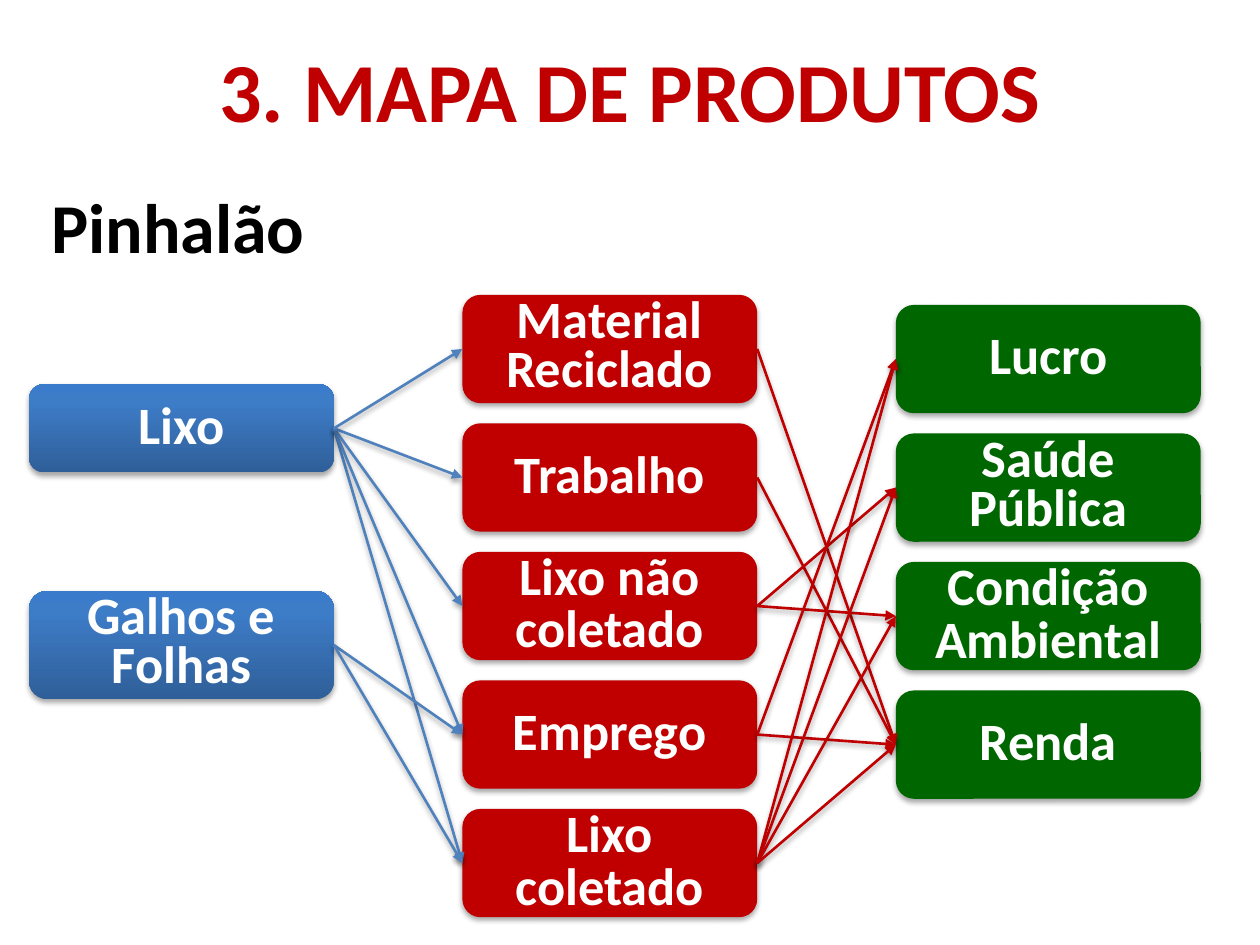
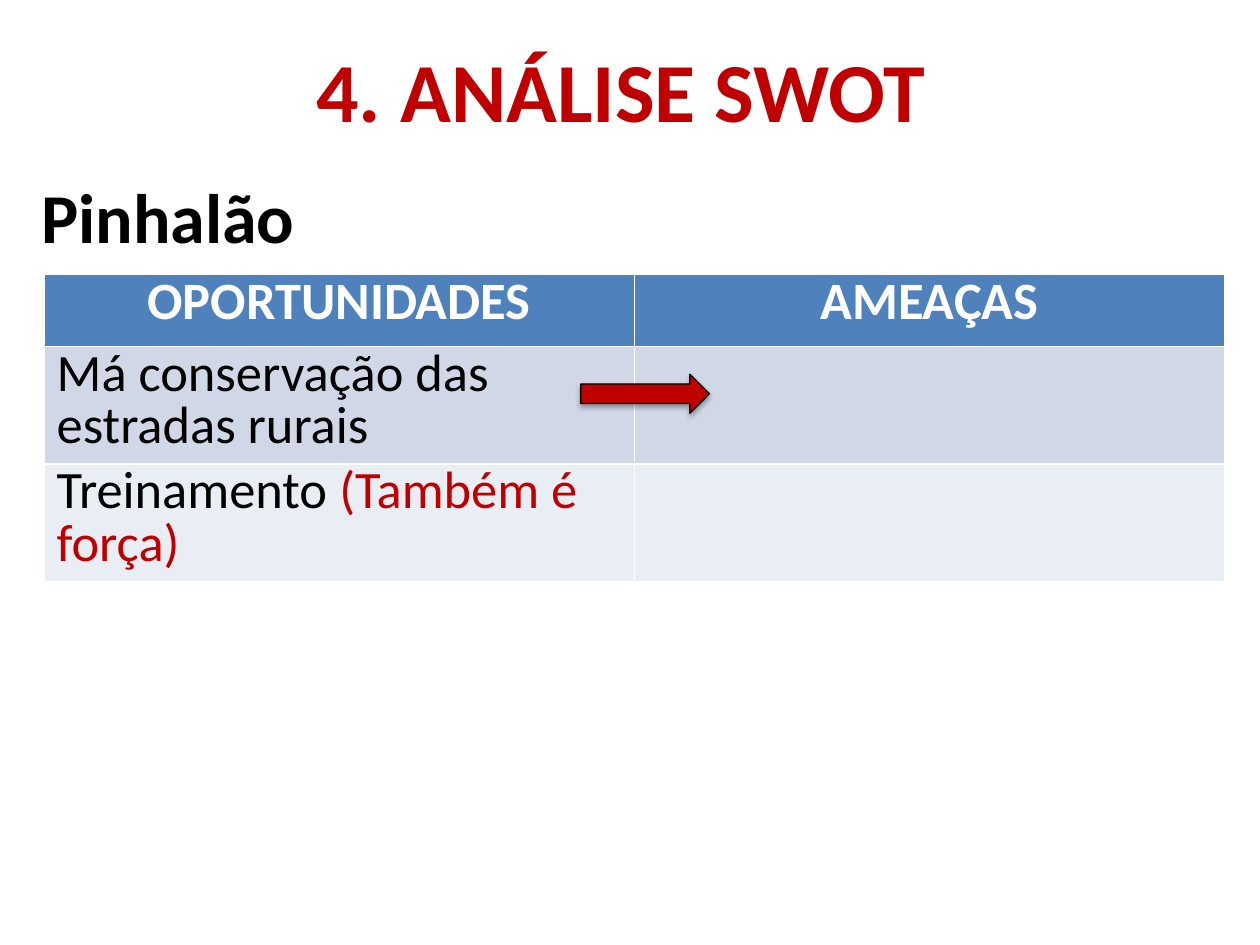
"""Build a product map slide and a SWOT table slide."""
from copy import deepcopy
from lxml import etree
from pptx import Presentation
from pptx.dml.color import RGBColor
from pptx.enum.shapes import MSO_CONNECTOR, MSO_SHAPE
from pptx.enum.text import MSO_ANCHOR, MSO_AUTO_SIZE, PP_ALIGN
from pptx.oxml.ns import qn
from pptx.util import Inches, Pt

RED = RGBColor(0xC0, 0x00, 0x00)
GREEN = RGBColor(0x00, 0x66, 0x00)
BLUE = RGBColor(0x4F, 0x81, 0xBD)
BLACK = RGBColor(0x00, 0x00, 0x00)
WHITE = RGBColor(0xFF, 0xFF, 0xFF)
BAND = RGBColor(0xD0, 0xD8, 0xE8)
PALE = RGBColor(0xE9, 0xED, 0xF4)
FADE = [(0, RGBColor(0x2F, 0x5F, 0x99)), (0.8, RGBColor(0x3D, 0x7C, 0xC7)),
        (1, RGBColor(0x3A, 0x7C, 0xCB))]

CENTER, LEFT = PP_ALIGN.CENTER, PP_ALIGN.LEFT
MIDDLE = MSO_ANCHOR.MIDDLE
GROW = MSO_AUTO_SIZE.SHAPE_TO_FIT_TEXT
ROUND, ARROW = MSO_SHAPE.ROUNDED_RECTANGLE, MSO_SHAPE.RIGHT_ARROW
STRAIGHT = MSO_CONNECTOR.STRAIGHT
SIDE_L, SIDE_R = 1, 3
PITCH = 1.02

INPUTS = [("Lixo", 3.05, 0.7, 30), ("Galhos e Folhas", 4.69, 0.86, 28)]
OUTPUTS = [("Material Reciclado", 28), ("Trabalho", 30),
           ("Lixo não coletado", 30), ("Emprego", 30), ("Lixo coletado", 30)]
GAINS = [("Lucro", 30), ("Saúde Pública", 28),
         ("Condição Ambiental", 30), ("Renda", 30)]
IN_OUT = {0: [4, 3, 2, 1, 0], 1: [3, 4]}
OUT_GAIN = {0: [3], 1: [3], 2: [1, 2], 3: [0, 3], 4: [0, 1, 2, 3]}
HEADS = ["OPORTUNIDADES", "AMEAÇAS"]
ROWS = [[("Má conservação das estradas rurais", BLACK)],
        [("Treinamento ", BLACK), ("(Também é força)", RED)]]


def write(para, runs, size, bold=True, align=LEFT, lead=None):
    """Fill a paragraph with coloured runs."""
    for name, value in {"alignment": align, "line_spacing": lead}.items():
        if value is not None:
            setattr(para, name, value)
    for text, color in runs:
        run = para.add_run()
        run.text = text
        look = {"name": "Calibri", "size": Pt(size), "bold": bold}
        for name, value in look.items():
            setattr(run.font, name, value)
        run.font.color.rgb = color


def place(shape, left, top, width, height):
    """Set a shape's place and size in inches."""
    spot = {"left": left, "top": top, "width": width, "height": height}
    for name, value in spot.items():
        setattr(shape, name, Inches(value))


def shade(shape):
    """Give a shape a soft shadow below it."""
    props = shape._element.spPr
    effect = etree.SubElement(props, qn("a:effectLst"))
    outer = etree.SubElement(effect, qn("a:outerShdw"), blurRad="40000",
                             dist="23000", dir="5400000", rotWithShape="0")
    color = etree.SubElement(outer, qn("a:srgbClr"), val="000000")
    etree.SubElement(color, qn("a:alpha"), val="35000")


def blend(shape):
    """Fill a shape with the blue gradient."""
    shape.fill.gradient()
    shape.fill.gradient_angle = 90
    stops = shape._element.spPr.find(".//" + qn("a:gsLst"))
    stops.append(deepcopy(stops[-1]))
    for stop, (pos, color) in zip(shape.fill.gradient_stops, FADE):
        stop.position = pos
        stop.color.rgb = color


def start(deck, title, left, head):
    """Add a slide with its title and place heading."""
    slide = deck.slides.add_slide(deck.slide_layouts[5])
    place(slide.shapes.title, left, 0.08, 9, 1.25)
    frame = slide.shapes.title.text_frame
    frame.vertical_anchor = MIDDLE
    write(frame.paragraphs[0], [(title, RED)], 48, align=CENTER)
    frame = slide.shapes.add_textbox(*map(Inches, head)).text_frame
    frame.word_wrap = True
    frame.auto_size = GROW
    write(frame.paragraphs[0], [("Pinhalão", BLACK)], 40)
    return slide


def add_box(slide, text, lead, spot, color=None):
    """Add a rounded box, blue gradient unless a colour is given."""
    box = slide.shapes.add_shape(ROUND, *map(Inches, spot))
    if color is None:
        blend(box)
    else:
        box.fill.solid()
        box.fill.fore_color.rgb = color
    box.line.fill.background()
    shade(box)
    frame = box.text_frame
    for side in ("left", "top", "right", "bottom"):
        setattr(frame, "margin_" + side, Inches(0.04))
    frame.word_wrap = True
    frame.vertical_anchor = MIDDLE
    write(frame.paragraphs[0], [(text, WHITE)], 30, align=CENTER,
          lead=Pt(lead))
    return box


def stack(slide, items, left, top, width, color):
    """Add a column of evenly spaced boxes."""
    return [add_box(slide, text, lead,
                    (left, top + i * PITCH, width, 0.86), color)
            for i, (text, lead) in enumerate(items)]


def link(slide, froms, tos, pairs, color):
    """Join boxes of two columns with arrows."""
    for src, ends in pairs.items():
        for end in ends:
            line = slide.shapes.add_connector(STRAIGHT, 0, 0, 0, 0)
            line.begin_connect(froms[src], SIDE_R)
            line.end_connect(tos[end], SIDE_L)
            line.line.color.rgb = color
            line.line.width = Pt(1.5)
            etree.SubElement(line.line._get_or_add_ln(), qn("a:tailEnd"),
                             type="triangle")
            shade(line)


def add_map(deck):
    """Build the product map slide."""
    slide = start(deck, "3. MAPA DE PRODUTOS", 0.5, (0.31, 1.41, 4.14, 0.77))
    inputs = [add_box(slide, text, lead, (0.23, top, 2.42, height))
              for text, top, height, lead in INPUTS]
    outputs = stack(slide, OUTPUTS, 3.67, 2.34, 2.34, RED)
    gains = stack(slide, GAINS, 7.11, 2.42, 2.42, GREEN)
    link(slide, inputs, outputs, IN_OUT, BLUE)
    link(slide, outputs, gains, OUT_GAIN, RED)


def add_swot(deck):
    """Build the SWOT slide."""
    slide = start(deck, "4. ANÁLISE SWOT", 0.43, (0.23, 1.33, 2.5, 0.77))
    spot = map(Inches, (0.35, 2.18, 9.37, 2.43))
    table = slide.shapes.add_table(3, 2, *spot).table
    for row, height, fill in zip(table.rows, (0.57, 0.93, 0.93),
                                 (BLUE, BAND, PALE)):
        row.height = Inches(height)
        for cell in row.cells:
            cell.fill.solid()
            cell.fill.fore_color.rgb = fill
    for col, text in enumerate(HEADS):
        write(table.cell(0, col).text_frame.paragraphs[0], [(text, WHITE)],
              30, align=CENTER, lead=Pt(30))
    for row, runs in enumerate(ROWS, 1):
        write(table.cell(row, 0).text_frame.paragraphs[0], runs, 30,
              bold=False, lead=Pt(30))
    arrow = slide.shapes.add_shape(ARROW, *map(Inches,
                                               (4.61, 2.97, 1.02, 0.31)))
    arrow.fill.solid()
    arrow.fill.fore_color.rgb = RED
    arrow.line.color.rgb = BLACK
    arrow.line.width = Pt(0.75)
    shade(arrow)


def main():
    """Build and save the deck."""
    deck = Presentation()
    deck.slide_width, deck.slide_height = Inches(10), Inches(7.5)
    add_map(deck)
    add_swot(deck)
    deck.save("out.pptx")


if __name__ == "__main__":
    main()
